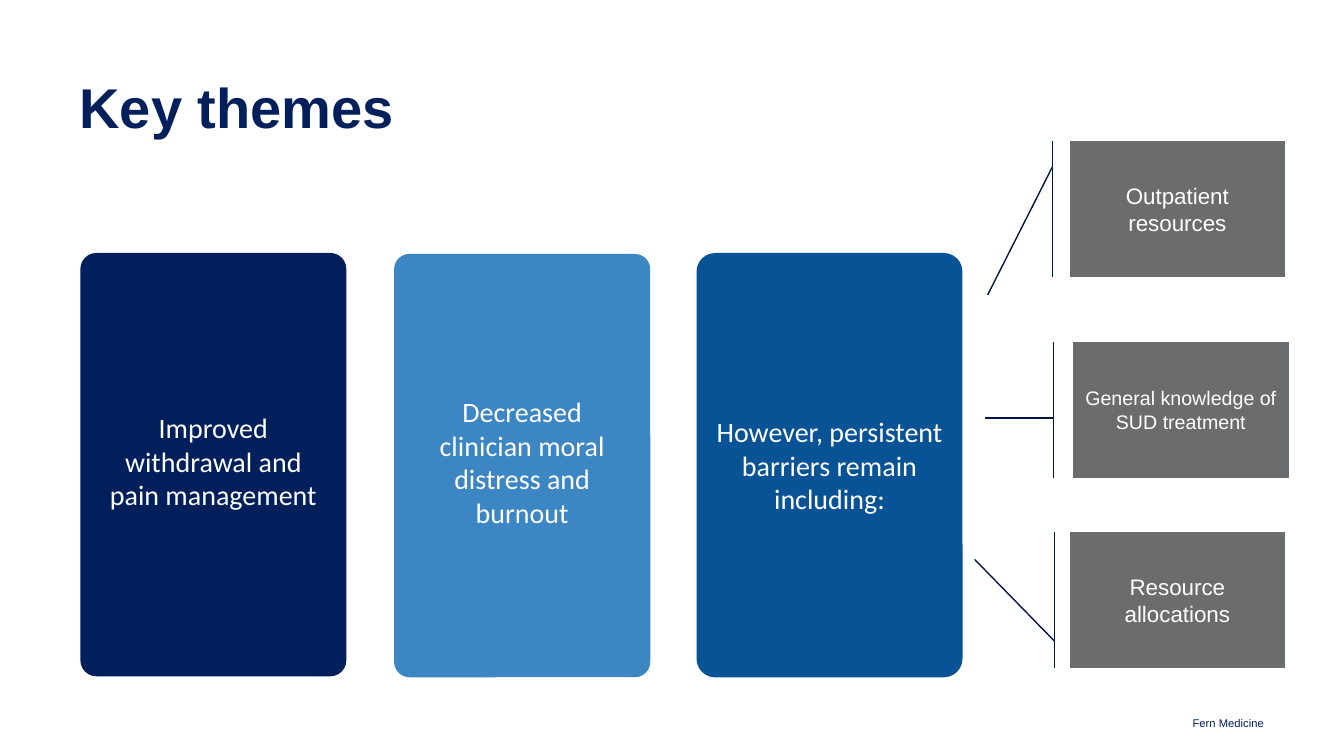
from pptx import Presentation
from pptx.dml.color import RGBColor
from pptx.enum.shapes import MSO_SHAPE as Preset
from pptx.enum.text import MSO_ANCHOR as Anchor, PP_ALIGN as Align
from pptx.util import Pt

NAVY, SKY, BLUE = "011F5B", "3C86C3", "085296"
GRAY, LEADER, WHITE = "6B6C6E", "011743", "FFFFFF"


def color(hex_code):
    return RGBColor.from_string(hex_code)


class ThemeSlide:
    """Holds the slide and the style of its elements."""

    heading_font, card_font = "Arial", "Calibri"

    def __init__(self, deck):
        self.shapes = deck.slides.add_slide(deck.slide_layouts[6]).shapes

    def set_text(self, shape, text, font, size, ink, align, anchor, insets, bold=False):
        frame = shape.text_frame
        frame.text = text
        frame.word_wrap = True
        frame.vertical_anchor = anchor
        (frame.margin_left, frame.margin_top,
         frame.margin_right, frame.margin_bottom) = map(Pt, insets)
        paragraph = frame.paragraphs[0]
        paragraph.alignment = align
        letters = paragraph.runs[0].font
        letters.name, letters.size, letters.bold = font, Pt(size), bold
        letters.color.rgb = color(ink)
        return paragraph

    def label(self, box, text, size, align, anchor, bold=False):
        holder = self.shapes.add_textbox(*map(Pt, box))
        return self.set_text(holder, text, self.heading_font, size, NAVY,
                             align, anchor, (0, 0, 0, 0), bold)

    def block(self, preset, box, fill, adjustments):
        shape = self.shapes.add_shape(preset, *map(Pt, box))
        shape.shadow.inherit = False
        shape.fill.solid()
        shape.fill.fore_color.rgb = color(fill)
        for index, value in enumerate(adjustments):
            shape.adjustments[index] = value
        return shape

    def card(self, box, text, fill, rounding, side, bottom):
        card = self.block(Preset.ROUNDED_RECTANGLE, box, fill, [rounding])
        card.line.fill.background()
        self.set_text(card, text, self.card_font, 20, WHITE,
                      Align.CENTER, Anchor.MIDDLE, (side, 3.6, side, bottom))

    def barrier(self, left, top, text, size, pointer):
        callout = self.block(Preset.LINE_CALLOUT_1_ACCENT_BAR,
                             (left, top, 154, 97.2), GRAY, pointer)
        callout.line.color.rgb = color(LEADER)
        callout.line.width = Pt(1)
        self.set_text(callout, text, self.heading_font, size, WHITE,
                      Align.CENTER, Anchor.MIDDLE, (5.76, 2.88, 5.76, 2.88))


def main():
    deck = Presentation()
    deck.slide_width, deck.slide_height = Pt(960), Pt(540)
    themes = ThemeSlide(deck)

    # Title and footer
    title = themes.label((56.9, 56.9, 846.7, 43.9), "Key themes", 40,
                         Align.LEFT, Anchor.TOP, bold=True)
    title.line_spacing = 0.9
    themes.label((712.8, 506.9, 190, 14.4), "Fern Medicine", 8,
                 Align.RIGHT, Anchor.BOTTOM)

    # Theme cards: box, text, fill, rounding, side inset, bottom inset
    for card in (
        ((57.4, 180.7, 190, 302.4), "Improved withdrawal and pain management",
         NAVY, 0.06, 16, 9),
        ((281.5, 181.4, 183, 302.4), "Decreased clinician moral distress and burnout",
         SKY, 0.06, 11, 9),
        ((497.5, 180.7, 190, 303.1), "However, persistent barriers remain including:",
         BLUE, 0.07, 7.2, 3.6),
    ):
        themes.card(*card)

    # Barrier callouts: left, top, text, size, pointer start and end (y, x)
    for barrier in (
        (764, 100.8, "Outpatient resources", 16, (0.19, -0.08, 1.13, -0.38)),
        (766.5, 244.1, "General knowledge of SUD treatment", 14,
         (0.56, -0.09, 0.56, -0.41)),
        (764, 380.2, "Resource allocations", 16, (0.8, -0.07, 0.2, -0.44)),
    ):
        themes.barrier(*barrier)

    deck.save("out.pptx")


if __name__ == "__main__":
    main()
